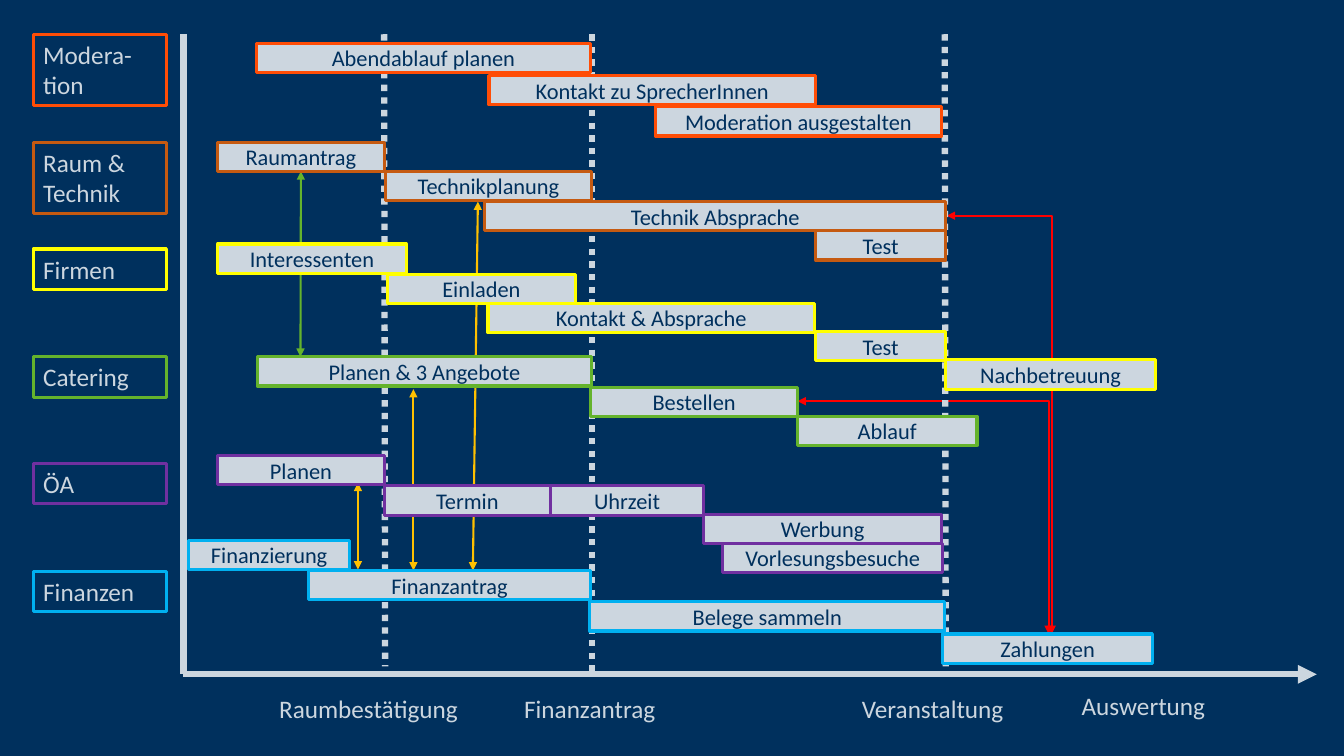
from dataclasses import dataclass

from lxml import etree
from pptx import Presentation
from pptx.dml.color import RGBColor
from pptx.enum.dml import MSO_LINE
from pptx.enum.shapes import MSO_CONNECTOR, MSO_SHAPE
from pptx.enum.text import MSO_ANCHOR, MSO_AUTO_SIZE, PP_ALIGN
from pptx.oxml.ns import qn
from pptx.util import Inches, Pt

RECTANGLE = MSO_SHAPE.RECTANGLE
STRAIGHT = MSO_CONNECTOR.STRAIGHT
ELBOW = MSO_CONNECTOR.ELBOW
DOTTED = MSO_LINE.ROUND_DOT
MIDDLE, TOP = MSO_ANCHOR.MIDDLE, MSO_ANCHOR.TOP
CENTER, LEFT = PP_ALIGN.CENTER, PP_ALIGN.LEFT
GROW, FIXED = MSO_AUTO_SIZE.SHAPE_TO_FIT_TEXT, MSO_AUTO_SIZE.NONE
BOTTOM_SIDE = 2

COLUMNS, ROWS = 1333, 750
CELL = Inches(0.01)
BAR_ROWS = 29
LABEL_ROWS = 40
TALL_LABEL_ROWS = 71
LANE_PITCH = 106.6


@dataclass(frozen=True)
class Theme:
    navy: str = "00305D"
    pale: str = "CCD6DF"
    orange: str = "FF4D06"
    brown: str = "C55A11"
    yellow: str = "FFFF00"
    green: str = "64B32C"
    purple: str = "7030A0"
    blue: str = "00B0F0"
    red: str = "FF0000"
    amber: str = "FFC000"
    font: str = "Calibri"
    label_size: int = 18
    bar_size: int = 16
    axis_line: float = 4.5
    frame_line: float = 2.25
    link_line: float = 1.5


@dataclass(frozen=True)
class Box:
    column: float
    row: float
    width: float
    height: float

    def inner(self, column, row, width, height):
        return Box(self.column + column, self.row + row, width, height)

    def emu(self):
        return [round(value * CELL) for value in (self.column, self.row, self.width, self.height)]


THEME = Theme()
PAGE = Box(0, 0, COLUMNS, ROWS)
CHART = PAGE.inner(182, 34, 1124, 635)
LABELS = PAGE.inner(33, 34, 132, 604)

LANES = [
    (["Modera-tion"], TALL_LABEL_ROWS, THEME.orange, [
        ("Abendablauf planen", 72, 9, 332),
        ("Kontakt zu SprecherInnen", 303, 41, 324),
        ("Moderation ausgestalten", 468, 72, 284)]),
    (["Raum &", "Technik"], TALL_LABEL_ROWS, THEME.brown, [
        ("Raumantrag", 34, 0, 165),
        ("Technikplanung", 200, 29, 205),
        ("Technik Absprache", 299, 59, 457),
        ("Test", 627, 88, 129)]),
    (["Firmen"], LABEL_ROWS, THEME.yellow, [
        ("Interessenten", 34, -5, 187),
        ("Einladen", 202, 25, 187),
        ("Kontakt & Absprache", 302, 54, 324),
        ("Test", 627, 82, 129),
        ("Nachbetreuung", 756, 110, 208)]),
    (["Catering"], LABEL_ROWS, THEME.green, [
        ("Planen & 3 Angebote", 73, 0, 332),
        ("Bestellen", 404, 30, 205),
        ("Ablauf", 609, 59, 178)]),
    (["ÖA"], LABEL_ROWS, THEME.purple, [
        ("Planen", 34, -8, 165),
        ("Termin", 199, 22, 165),
        ("Werbung", 516, 50, 236),
        ("Vorlesungsbesuche", 535, 79, 218),
        ("Uhrzeit", 364, 22, 152)]),
    (["Finanzen"], LABEL_ROWS, THEME.blue, [
        ("Zahlungen", 753, 62, 208),
        ("Finanzantrag", 124, -1, 280),
        ("Belege sammeln", 403, 30, 352),
        ("Finanzierung", 5, -31, 160)]),
]
LINKS = [
    (ELBOW, THEME.red, (757, 180), (861, 595)),
    (ELBOW, THEME.red, (609, 364), (858, 595)),
    (STRAIGHT, THEME.amber, (228, 352), (228, 532)),
    (STRAIGHT, THEME.amber, (292, 166), (287, 532)),
    (STRAIGHT, THEME.amber, (173, 445), (173, 531)),
]
ROOM_TO_CATERING = (STRAIGHT, THEME.green, (116, 135), (116, 320))
MILESTONES = [((755, 0), (756, 627)), ((405, 0), (405, 635)), ((199, 0), (200, 627))]
MILESTONE_LABELS = [
    ("Raumbestätigung", 85, 649, 248),
    ("Finanzantrag", 328, 649, 248),
    ("Veranstaltung", 663, 649, 193),
    ("Auswertung", 881, 646, 193),
]


def assign(target, values):
    for name, value in values.items():
        setattr(target, name, value)


def write(shape, lines, size, color, frame_format, align):
    assign(shape.text_frame, {"word_wrap": True, **frame_format})
    shape.text_frame.text = "\n".join(lines)
    for para in shape.text_frame.paragraphs:
        para.alignment = align
        for span in para.runs:
            assign(span.font, {"size": Pt(size), "name": THEME.font})
            span.font.color.rgb = RGBColor.from_string(color)


def write_label(shape, lines):
    write(shape, lines, THEME.label_size, THEME.pale,
          {"auto_size": GROW, "vertical_anchor": TOP}, LEFT)


def draw_frame(page, box, color):
    shape = page.shapes.add_shape(RECTANGLE, *box.emu())
    shape.shadow.inherit = False
    shape.line.color.rgb = RGBColor.from_string(color)
    shape.line.width = Pt(THEME.frame_line)
    return shape


def draw_line(page, box, start, end, color, width, kind=STRAIGHT, arrows=(), dash=None):
    points = [box.inner(*point, 0, 0).emu()[:2] for point in (start, end)]
    line = page.shapes.add_connector(kind, *points[0], *points[1])
    assign(line.line, {"width": Pt(width), "dash_style": dash})
    line.line.color.rgb = RGBColor.from_string(color)
    properties = line._element.spPr
    if kind == ELBOW:
        properties.find(qn("a:prstGeom")).set("prst", "bentConnector2")
    for arrow in arrows:
        etree.SubElement(properties.find(qn("a:ln")), qn(arrow), type="triangle")
    etree.SubElement(properties, qn("a:effectLst"))
    return line


def draw_link(page, box, kind, color, start, end):
    return draw_line(page, box, start, end, color, THEME.link_line, kind,
                     ("a:headEnd", "a:tailEnd"))


def draw_axes(page, box):
    for start, end in MILESTONES:
        draw_line(page, box, start, end, THEME.pale, THEME.axis_line, dash=DOTTED)
    corner = (0, box.height)
    draw_line(page, box, corner, (box.width, box.height), THEME.pale, THEME.axis_line,
              arrows=("a:tailEnd",))
    draw_line(page, box, (0, 0), corner, THEME.pale, THEME.axis_line)
    for text, column, row, width in MILESTONE_LABELS:
        label = page.shapes.add_textbox(*box.inner(column, row, width, LABEL_ROWS).emu())
        write_label(label, [text])


def draw_lane(page, label_box, bar_box, lines, color, bars):
    label = draw_frame(page, label_box, color)
    label.fill.background()
    write_label(label, lines)
    drawn = {}
    for text, column, row, width in bars:
        bar = draw_frame(page, bar_box.inner(column, row, width, BAR_ROWS), color)
        bar.fill.solid()
        bar.fill.fore_color.rgb = RGBColor.from_string(THEME.pale)
        write(bar, [text], THEME.bar_size, THEME.navy,
              {"auto_size": FIXED, "vertical_anchor": MIDDLE}, CENTER)
        drawn[text] = bar
    return drawn


def draw_plan(page):
    for link in LINKS:
        draw_link(page, CHART, *link)
    room_link = draw_link(page, CHART, *ROOM_TO_CATERING)
    draw_axes(page, CHART)
    for index, (lines, height, color, bars) in enumerate(LANES):
        top = round(index * LANE_PITCH)
        drawn = draw_lane(page, LABELS.inner(0, top, LABELS.width, height),
                          CHART.inner(0, top, CHART.width, LANE_PITCH), lines, color, bars)
        if "Raumantrag" in drawn:
            room_link.begin_connect(drawn["Raumantrag"], BOTTOM_SIDE)


def main():
    deck = Presentation()
    assign(deck, {"slide_width": COLUMNS * CELL, "slide_height": ROWS * CELL})
    page = deck.slides.add_slide(deck.slide_layouts[6])
    page.background.fill.solid()
    page.background.fill.fore_color.rgb = RGBColor.from_string(THEME.navy)
    draw_plan(page)
    deck.save("out.pptx")


if __name__ == "__main__":
    main()
